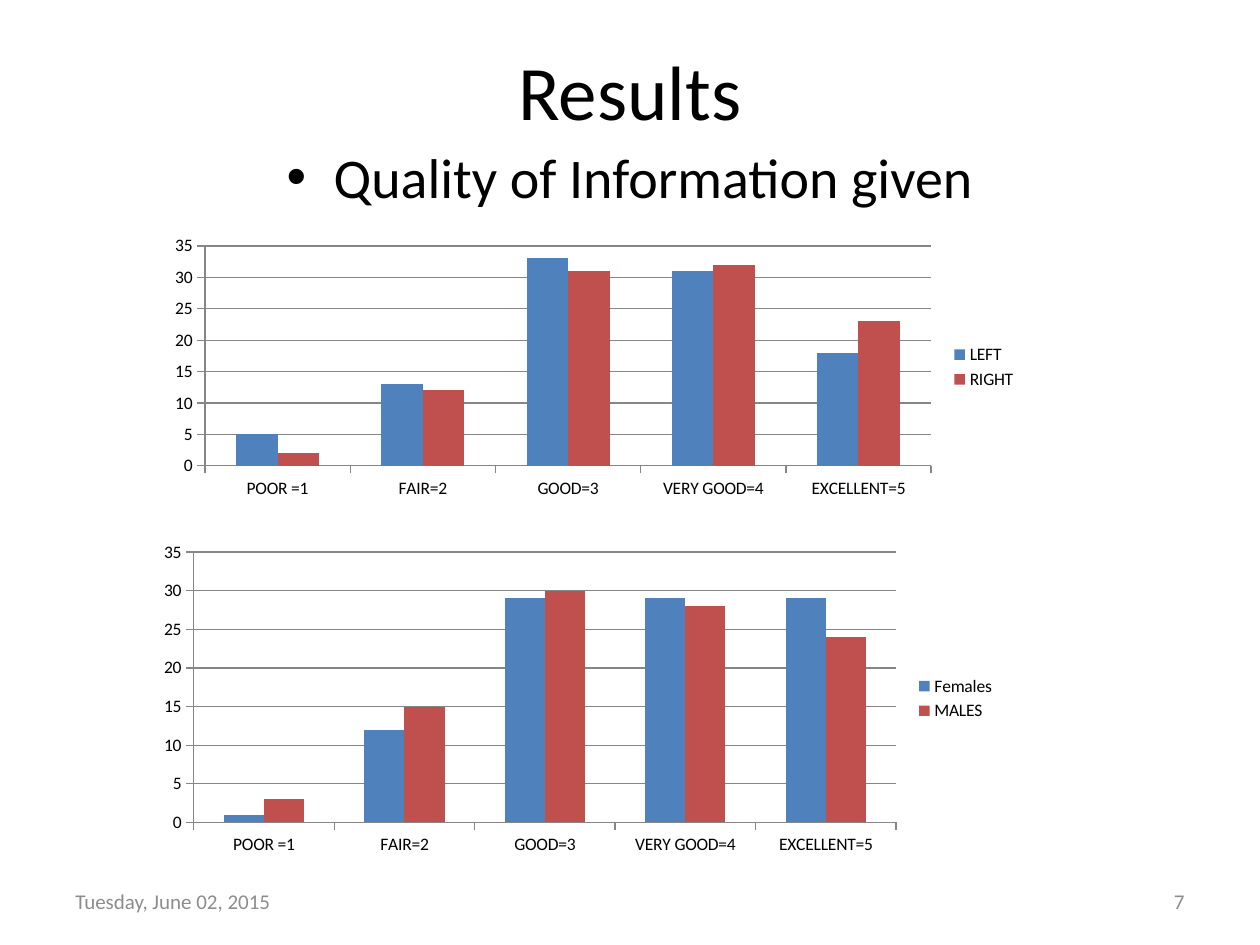
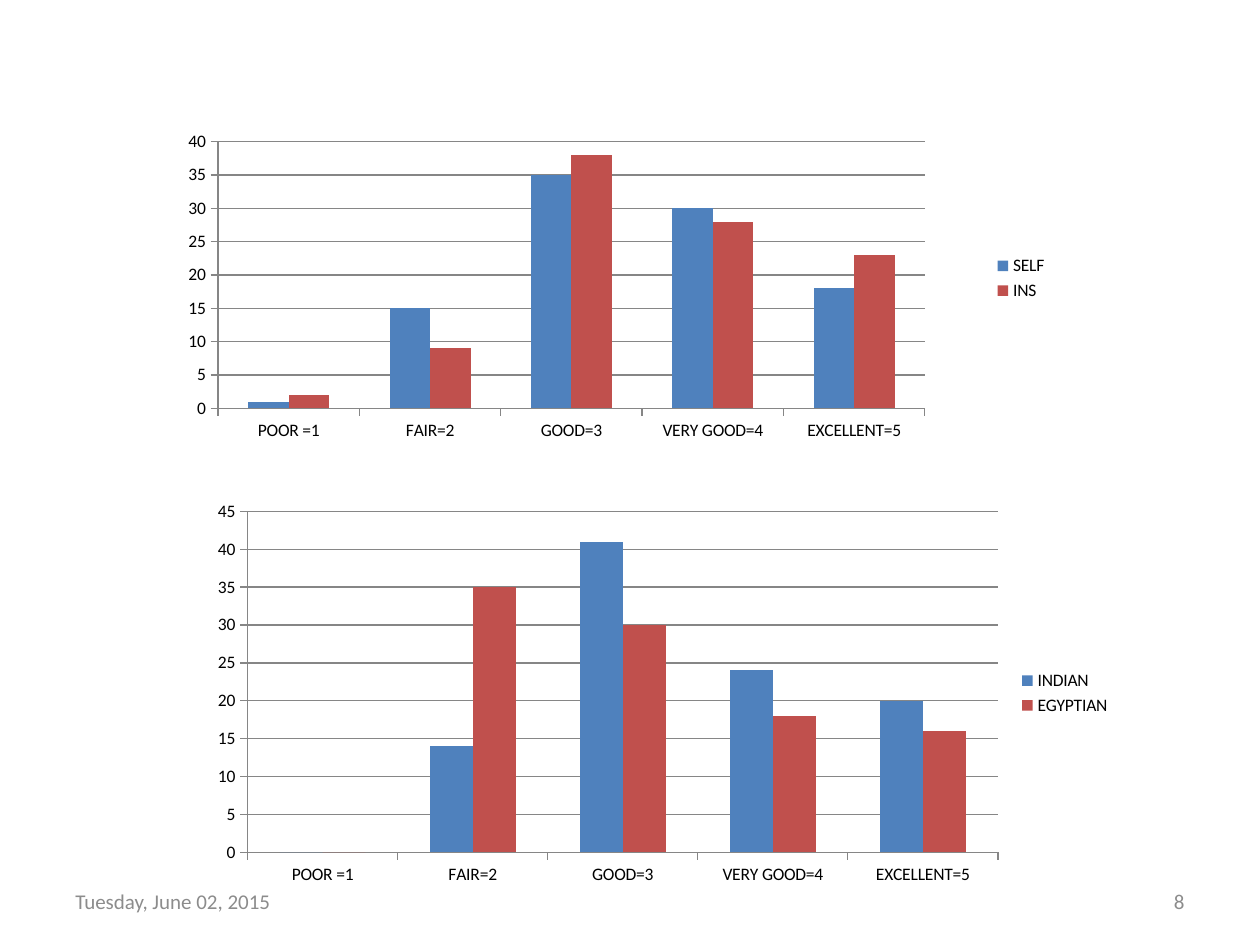
import lxml.etree
import pptx
import pptx.chart.data
import pptx.dml.color
import pptx.enum.chart
import pptx.enum.text
import pptx.oxml
import pptx.oxml.ns
import pptx.util

Cm, Pt = pptx.util.Cm, pptx.util.Pt
qn = pptx.oxml.ns.qn
ALIGN = pptx.enum.text.PP_ALIGN
ANCHOR = pptx.enum.text.MSO_ANCHOR

FONT = "Calibri"
BLACK, GREY, AXIS_GREY = "000000", "8C8C8C", "868686"
SERIES_COLORS = ("4F81BD", "C0504D")
DATE = "Tuesday, June 02, 2015"
RATINGS = ("POOR =1", "FAIR=2", "GOOD=3", "VERY GOOD=4", "EXCELLENT=5")

# Boxes are left, top, width, height in cm.
TITLE_BOX = (1.27, 0.43, 22.86, 2.74)
BULLET_BOX = (1.27, 2.74, 22.86, 1.9)
DATE_BOX = (1.27, 17.65, 5.92, 1.02)
NUMBER_BOX = (18.21, 17.65, 5.92, 1.02)

SLIDES = [
    {"number": 7, "title": "Results", "bullet": "Quality of Information given",
     "charts": [
         {"box": (3.18, 4.65, 17.57, 5.5), "max": 35,
          "series": {"LEFT ": (5, 13, 33, 31, 18), "RIGHT": (2, 12, 31, 32, 23)}},
         {"box": (2.96, 10.8, 17.36, 6.56), "max": 35,
          "series": {"Females": (1, 12, 29, 29, 29), "MALES": (3, 15, 30, 28, 24)}},
     ]},
    {"number": 8,
     "charts": [
         {"box": (3.39, 2.33, 17.99, 6.56), "max": 40,
          "plot": {"x": 0.056, "y": 0.08, "w": 0.792, "h": 0.82},
          "series": {"SELF": (1, 15, 35, 30, 18), "INS": (2, 9, 38, 28, 23)}},
         {"box": (4.02, 9.95, 18.63, 8.04), "max": 45,
          "series": {"INDIAN": (0, 14, 41, 24, 20), "EGYPTIAN": (0, 35, 30, 18, 16)}},
     ]},
]


def rgb(color):
    return pptx.dml.color.RGBColor.from_string(color)


def place(box):
    return [Cm(v) for v in box]


def write(sp, text, size, color, align, anchor):
    tf = sp.text_frame
    tf.word_wrap = True
    tf.vertical_anchor = anchor
    p = tf.paragraphs[0]
    p.alignment = align
    r = p.add_run()
    r.text = text
    r.font.size, r.font.name = Pt(size), FONT
    r.font.color.rgb = rgb(color)
    return p


def add_text(s, box, *style):
    return write(s.shapes.add_textbox(*place(box)), *style)


def add_title(s, text):
    sp = s.shapes.title
    sp.left, sp.top, sp.width, sp.height = place(TITLE_BOX)
    write(sp, text, 44, BLACK, ALIGN.CENTER, ANCHOR.MIDDLE)


def add_bullet(s, text):
    p = add_text(s, BULLET_BOX, text, 32, BLACK, ALIGN.CENTER, ANCHOR.TOP)
    p.space_before = Pt(6.4)
    pPr = p._p.get_or_add_pPr()
    indent = Cm(0.95)
    pPr.set("marL", str(indent))
    pPr.set("indent", str(-indent))
    lxml.etree.SubElement(pPr, qn("a:buFont"), typeface="Arial")
    lxml.etree.SubElement(pPr, qn("a:buChar"), char="•")


def set_inner_plot(chart, plot):
    """Fix the area inside the axes, as fractions of the chart."""
    area = chart.element.find(".//" + qn("c:plotArea"))
    for old in area.findall(qn("c:layout")):
        area.remove(old)
    layout = pptx.oxml.parse_xml(f"<c:layout {pptx.oxml.ns.nsdecls('c')}/>")
    area.insert(0, layout)
    manual = lxml.etree.SubElement(layout, qn("c:manualLayout"))
    settings = {"layoutTarget": "inner", "xMode": "edge", "yMode": "edge", **plot}
    for tag, value in settings.items():
        lxml.etree.SubElement(manual, qn("c:" + tag), val=str(value))


def style_line(line):
    line.color.rgb = rgb(AXIS_GREY)
    line.width = Pt(0.75)


def add_rating_chart(s, content):
    data = pptx.chart.data.CategoryChartData()
    data.categories = RATINGS
    for name, values in content["series"].items():
        data.add_series(name, values)
    kind = pptx.enum.chart.XL_CHART_TYPE.COLUMN_CLUSTERED
    chart = s.shapes.add_chart(kind, *place(content["box"]), data).chart
    chart.has_title = False
    chart.font.size, chart.font.name = Pt(10), FONT
    chart.font.color.rgb = rgb(BLACK)

    chart.has_legend = True
    chart.legend.position = pptx.enum.chart.XL_LEGEND_POSITION.RIGHT
    chart.legend.include_in_layout = False

    for axis in (chart.category_axis, chart.value_axis):
        axis.major_tick_mark = pptx.enum.chart.XL_TICK_MARK.OUTSIDE
        axis.minor_tick_mark = pptx.enum.chart.XL_TICK_MARK.NONE
        style_line(axis.format.line)
    scale = chart.value_axis
    scale.minimum_scale, scale.maximum_scale, scale.major_unit = 0, content["max"], 5
    scale.has_major_gridlines = True
    style_line(scale.major_gridlines.format.line)

    plot = chart.plots[0]
    plot.gap_width, plot.overlap = 150, 0
    plot.vary_by_categories = False
    for series, color in zip(plot.series, SERIES_COLORS):
        series.format.fill.solid()
        series.format.fill.fore_color.rgb = rgb(color)
    if "plot" in content:
        set_inner_plot(chart, content["plot"])


def add_footer(s, number):
    add_text(s, DATE_BOX, DATE, 12, GREY, ALIGN.LEFT, ANCHOR.MIDDLE)
    add_text(s, NUMBER_BOX, str(number), 12, GREY, ALIGN.RIGHT, ANCHOR.MIDDLE)


def main():
    prs = pptx.Presentation()
    prs.slide_width, prs.slide_height = Cm(25.4), Cm(19.05)
    title_only, blank = prs.slide_layouts[5], prs.slide_layouts[6]
    for content in SLIDES:
        s = prs.slides.add_slide(title_only if "title" in content else blank)
        if "title" in content:
            add_title(s, content["title"])
        if "bullet" in content:
            add_bullet(s, content["bullet"])
        for chart in content["charts"]:
            add_rating_chart(s, chart)
        add_footer(s, content["number"])
    prs.save("out.pptx")


if __name__ == "__main__":
    main()
